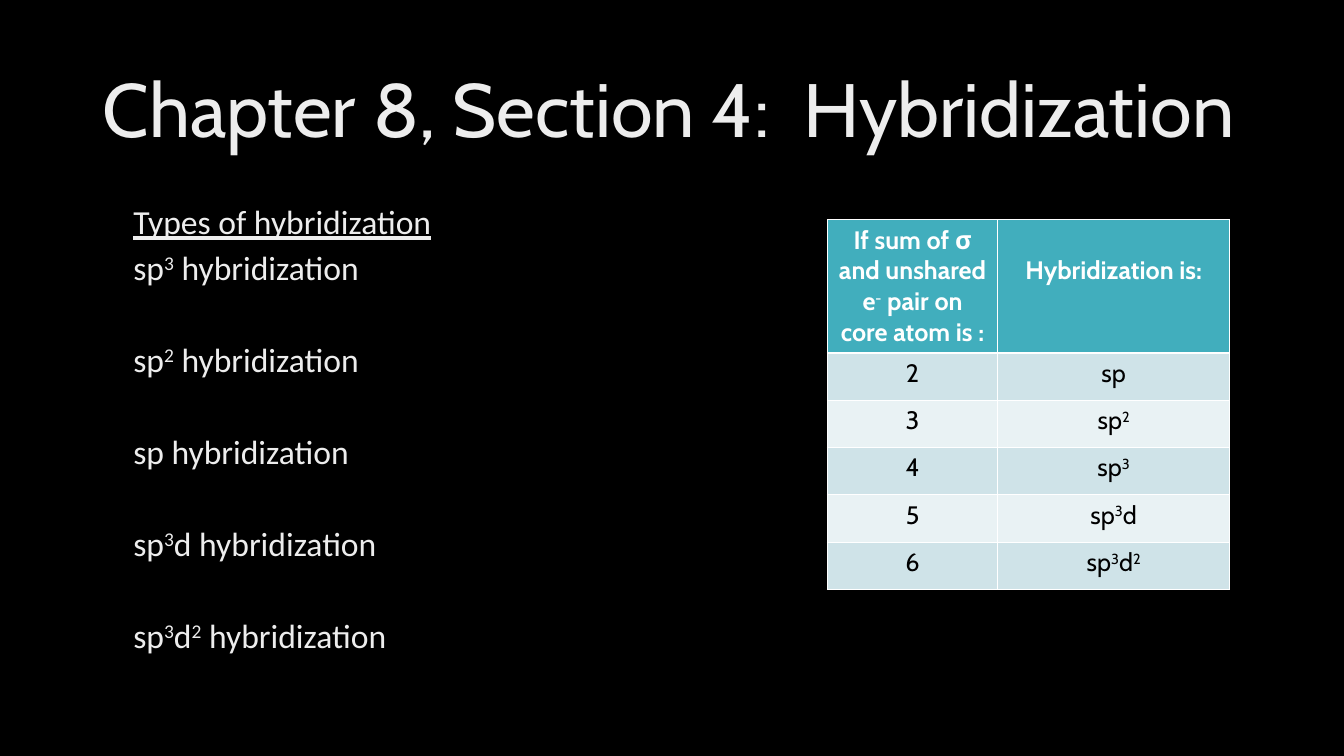
from lxml import etree
from pptx import Presentation
from pptx.dml.color import RGBColor
from pptx.enum.text import MSO_ANCHOR, MSO_AUTO_SIZE, PP_ALIGN
from pptx.oxml.ns import qn
from pptx.util import Pt

LEFT, CENTER = PP_ALIGN.LEFT, PP_ALIGN.CENTER
TOP, MIDDLE = MSO_ANCHOR.TOP, MSO_ANCHOR.MIDDLE
FIXED = MSO_AUTO_SIZE.NONE

BLACK = RGBColor(0x00, 0x00, 0x00)
WHITE = RGBColor(0xFF, 0xFF, 0xFF)
SILVER = RGBColor(0xED, 0xED, 0xED)
TEAL = RGBColor(0x41, 0xAE, 0xBD)
BANDS = RGBColor(0xCF, 0xE3, 0xE8), RGBColor(0xE9, 0xF2, 0xF4)

TYPES = ["sp^3^ hybridization", "sp^2^ hybridization", "sp hybridization",
         "sp^3^d hybridization", "sp^3^d^2^ hybridization"]
HEAD = ["If sum of σ and unshared e^-^ pair on core atom is :",
        "Hybridization is:"]
ROWS = [["2", "sp"], ["3", "sp^2^"], ["4", "sp^3^"],
        ["5", "sp^3^d"], ["6", "sp^3^d^2^"]]


class Page:
    def __init__(self, deck):
        self.slide = deck.slides.add_slide(deck.slide_layouts[1])
        fill = self.slide.background.fill
        fill.solid()
        fill.fore_color.rgb = BLACK
        self.face, self.list_face = "Cabin", "Calibri"

    def label(self, para, text, face, size, color, bold=False, align=LEFT):
        """Fill a paragraph; text between carets is superscript."""
        para.alignment = align
        for i, part in enumerate(text.split("^")):
            if not part:
                continue
            run = para.add_run()
            run.text = part
            font = run.font
            font.name, font.size, font.bold = face, Pt(size), bold
            font.color.rgb = color
            if i % 2:
                run._r.get_or_add_rPr().set("baseline", "30000")

    def place(self, shape, box, anchor):
        shape.left, shape.top, shape.width, shape.height = map(Pt, box)
        frame = shape.text_frame
        frame.word_wrap = True
        frame.auto_size = FIXED
        frame.vertical_anchor = anchor
        return frame

    def title(self, text, box):
        para = self.place(self.slide.shapes.title, box, MIDDLE).paragraphs[0]
        para.line_spacing = 0.9
        self.label(para, text, self.face, 54, SILVER)

    def body(self, head, items, box):
        frame = self.place(self.slide.placeholders[1], box, TOP)
        for i, text in enumerate([head, *items]):
            para = frame.add_paragraph() if i else frame.paragraphs[0]
            props = para._p.get_or_add_pPr()
            props.set("marL", "0")
            props.set("indent", "0")
            etree.SubElement(props, qn("a:buNone"))
            para.line_spacing = 0.87
            para.space_before = Pt(0)
            para.space_after = Pt(40.6 if i else 8)
            self.label(para, text, self.list_face, 24, SILVER)
        frame.paragraphs[0].runs[0].font.underline = True

    def table(self, rows, left, top, widths, heights):
        grid = self.slide.shapes.add_table(
            len(rows), len(widths), Pt(left), Pt(top),
            Pt(sum(widths)), Pt(sum(heights))).table
        for col, width in zip(grid.columns, widths):
            col.width = Pt(width)
        for i, (row, height) in enumerate(zip(rows, heights)):
            grid.rows[i].height = Pt(height)
            for j, text in enumerate(row):
                cell = grid.cell(i, j)
                cell.fill.solid()
                cell.fill.fore_color.rgb = BANDS[(i - 1) % 2] if i else TEAL
                self.label(cell.text_frame.paragraphs[0], text, self.face, 18,
                           BLACK if i else WHITE, not i, CENTER)
        grid.cell(0, 1).margin_top = Pt(25.5)


def main():
    deck = Presentation()
    deck.slide_width, deck.slide_height = Pt(960), Pt(540)
    page = Page(deck)
    page.title("Chapter 8, Section 4:  Hybridization", (66, 28.8, 828, 104.4))
    page.body("Types of hybridization", TYPES, (88, 144, 805.5, 342.5))
    page.table([HEAD, *ROWS], 591, 157, (121.7, 165.6),
               [94.5] + [33.8] * len(ROWS))
    deck.save("out.pptx")


if __name__ == "__main__":
    main()
